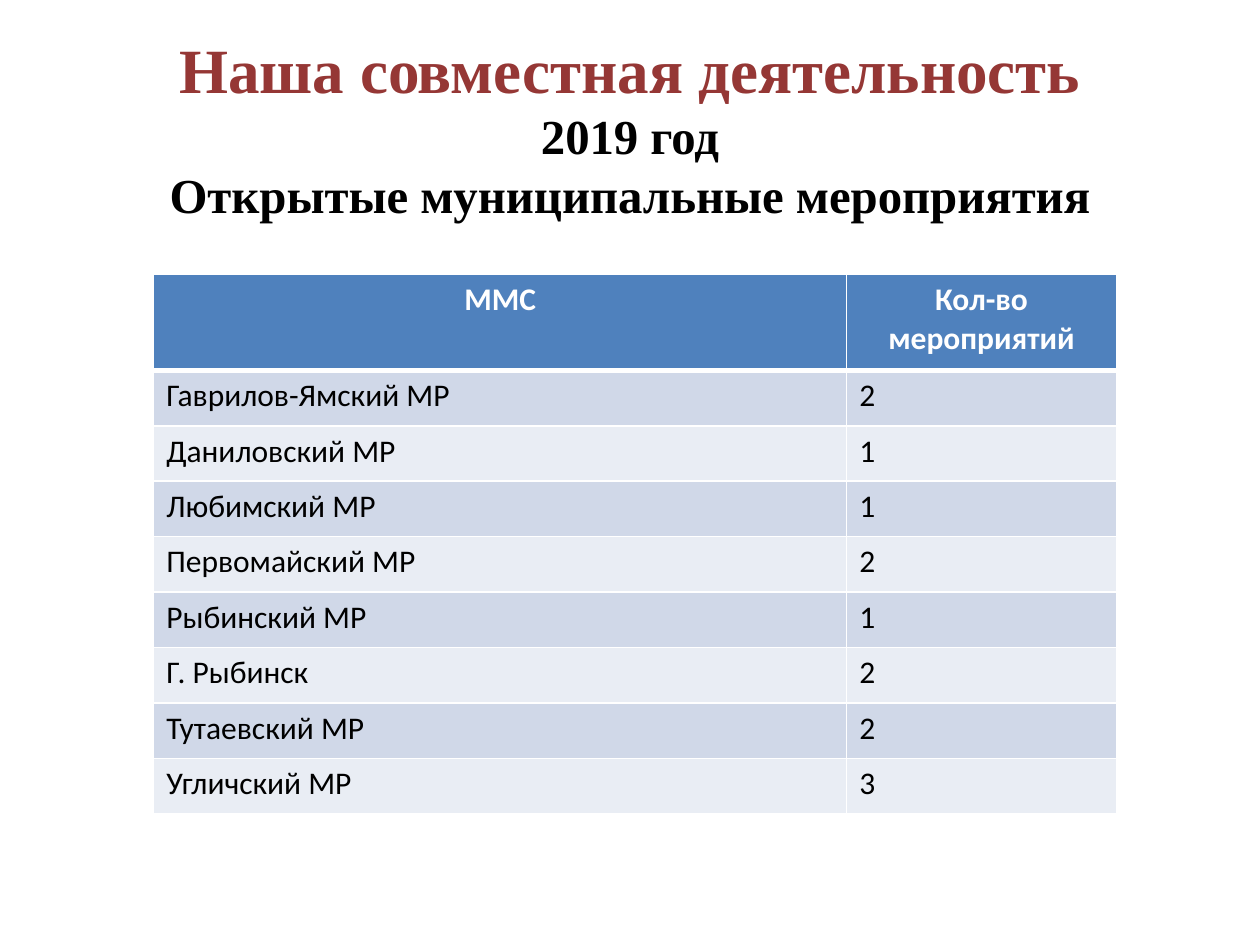
from lxml import etree
from pptx import Presentation
from pptx.dml.color import RGBColor
from pptx.enum import text
from pptx.oxml import ns
from pptx.util import Inches, Pt

TITLE = [
    ("Наша совместная деятельность", 36, "953735"),
    ("2019 год", 27.9, "000000"),
    ("Открытые муниципальные мероприятия", 27.9, "000000"),
]
HEADER = ("ММС", "Кол-во мероприятий")
EVENTS = [
    ("Гаврилов-Ямский МР", 2),
    ("Даниловский МР", 1),
    ("Любимский МР", 1),
    ("Первомайский МР", 2),
    ("Рыбинский МР", 1),
    ("Г. Рыбинск", 2),
    ("Тутаевский МР", 2),
    ("Угличский МР", 3),
]
COL_WIDTHS = (5.5, 2.14)
HEADER_H, ROW_H = 0.76, 0.44
HEADER_FILL, BANDS = "4F81BD", ("D0D8E8", "E9EDF4")


def rgb(color):
    return RGBColor.from_string(color)


def add_run(p, content, size=18, font="Calibri", color="000000", bold=False):
    r = p.add_run()
    r.text = content
    r.font.size, r.font.name, r.font.bold = Pt(size), font, bold
    r.font.color.rgb = rgb(color)


def set_borders(cell, color="FFFFFF", width=1, bottom=1, top=1):
    """Draw all four cell borders; python-pptx has no public method for them."""
    tc_pr = cell._tc.get_or_add_tcPr()
    sides = (("lnL", width), ("lnR", width), ("lnT", top), ("lnB", bottom))
    for i, (side, points) in enumerate(sides):
        ln = etree.Element(ns.qn(f"a:{side}"), w=str(Pt(points)))
        fill = etree.SubElement(ln, ns.qn("a:solidFill"))
        etree.SubElement(fill, ns.qn("a:srgbClr"), val=color)
        tc_pr.insert(i, ln)


def add_title(s):
    title = s.shapes.title
    title.left, title.top = Inches(0.5), Inches(0.6)
    title.width, title.height = Inches(9), Inches(1.42)
    tf = title.text_frame
    tf.word_wrap = True
    tf.auto_size = text.MSO_AUTO_SIZE.NONE
    tf.vertical_anchor = text.MSO_ANCHOR.MIDDLE
    tf.margin_bottom = Inches(0.66)
    p = tf.paragraphs[0]
    p.alignment = text.PP_ALIGN.CENTER
    for i, (line, size, color) in enumerate(TITLE):
        if i:
            p.add_line_break()
        add_run(p, line, size=size, font="Times New Roman", color=color, bold=True)


def add_events_table(s):
    rows = [HEADER, *EVENTS]
    height = HEADER_H + ROW_H * len(EVENTS)
    table = s.shapes.add_table(
        len(rows), len(HEADER), Inches(1.22), Inches(2.18),
        Inches(sum(COL_WIDTHS)), Inches(height)).table
    for col, width in zip(table.columns, COL_WIDTHS):
        col.width = Inches(width)
    for i, values in enumerate(rows):
        is_header = i == 0
        table.rows[i].height = Inches(HEADER_H if is_header else ROW_H)
        for j, value in enumerate(values):
            cell = table.cell(i, j)
            cell.fill.solid()
            cell.fill.fore_color.rgb = rgb(HEADER_FILL if is_header else BANDS[(i - 1) % 2])
            set_borders(cell, bottom=3 if is_header else 1, top=3 if i == 1 else 1)
            p = cell.text_frame.paragraphs[0]
            p.alignment = text.PP_ALIGN.CENTER if is_header else text.PP_ALIGN.LEFT
            add_run(p, str(value), color="FFFFFF" if is_header else "000000", bold=is_header)


def main():
    prs = Presentation()
    prs.slide_width, prs.slide_height = Inches(10), Inches(7.5)
    s = prs.slides.add_slide(prs.slide_layouts[5])
    add_title(s)
    add_events_table(s)
    prs.save("out.pptx")


if __name__ == "__main__":
    main()
